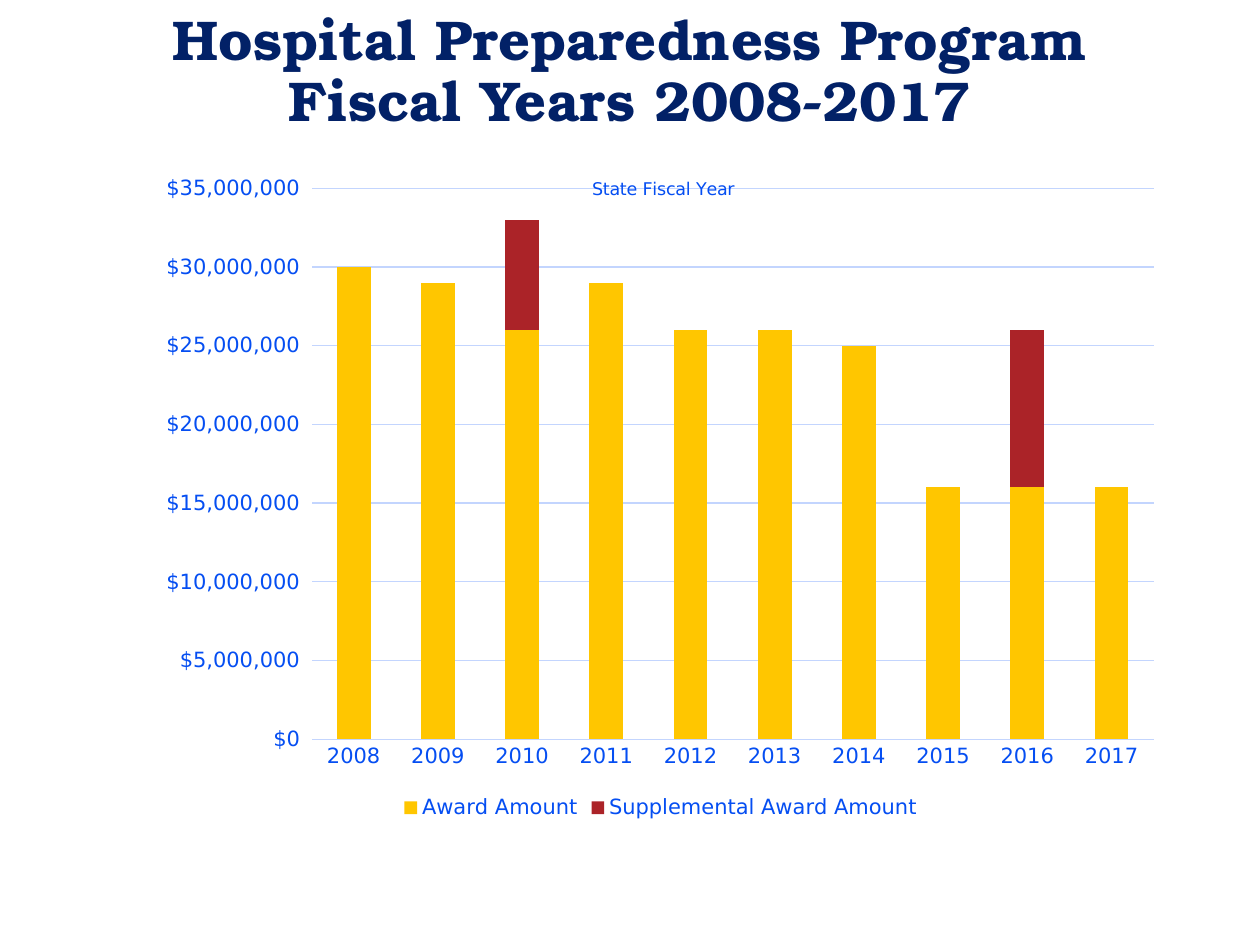
from dataclasses import dataclass
from typing import Optional

from lxml import etree
from pptx import Presentation
from pptx.chart.data import CategoryChartData
from pptx.dml.color import RGBColor
from pptx.enum.chart import XL_CHART_TYPE, XL_LEGEND_POSITION, XL_TICK_MARK
from pptx.enum.text import MSO_ANCHOR, PP_ALIGN
from pptx.oxml.ns import qn
from pptx.util import Pt

STACKED = XL_CHART_TYPE.COLUMN_STACKED
LEGEND_BOTTOM = XL_LEGEND_POSITION.BOTTOM
NO_TICK = XL_TICK_MARK.NONE
BOTTOM, CENTER = MSO_ANCHOR.BOTTOM, PP_ALIGN.CENTER
MILLION = 1_000_000


@dataclass(frozen=True)
class Theme:
    heading_font: str = "TeX Gyre Bonum"
    chart_font: str = "DejaVu Sans"
    navy: str = "022167"
    blue: str = "054EF2"
    grid: str = "C3D5FE"
    gold: str = "FFC600"
    red: str = "AB2328"
    heading_size: int = 32
    label_size: int = 12
    caption_size: int = 10


@dataclass(frozen=True)
class Box:
    left: float
    top: float
    width: float
    height: float

    def lengths(self) -> tuple:
        return Pt(self.left), Pt(self.top), Pt(self.width), Pt(self.height)


@dataclass(frozen=True)
class Award:
    name: str
    millions: list[Optional[int]]
    color: str


THEME = Theme()
HEADING_BOX = Box(49.7, 12.2, 620.6, 67.7)
CHART_BOX = Box(84.2, 62.6, 586.8, 409)
YEARS = [str(year) for year in range(2008, 2018)]
SUPPLEMENTS = {"2010": 7, "2016": 10, "2017": 0}
AWARDS = [
    Award("Award Amount", [30, 29, 26, 29, 26, 26, 25, 16, 16, 16], THEME.gold),
    Award("Supplemental Award Amount",
          [SUPPLEMENTS.get(year) for year in YEARS], THEME.red),
]


def style_font(font, name: str, size: float, color: str, bold: bool = False) -> None:
    font.name, font.size, font.bold = name, Pt(size), bold
    font.color.rgb = RGBColor.from_string(color)


def manual_layout(**settings) -> etree.Element:
    """Chart layout in fractions of the chart area."""
    layout = etree.Element(qn("c:layout"))
    manual = etree.SubElement(layout, qn("c:manualLayout"))
    for tag, value in settings.items():
        etree.SubElement(manual, qn(f"c:{tag}")).set("val", str(value))
    return layout


def remove_layout(parent) -> None:
    for layout in parent.findall(qn("c:layout")):
        parent.remove(layout)


def add_heading(slide, text: str) -> None:
    frame = slide.shapes.add_textbox(*HEADING_BOX.lengths()).text_frame
    frame.word_wrap = True
    frame.vertical_anchor = BOTTOM
    heading = frame.paragraphs[0]
    heading.text = text
    heading.alignment = CENTER
    heading.line_spacing = 0.9
    style_font(heading.font, THEME.heading_font, THEME.heading_size, THEME.navy, True)


def style_axis(axis) -> None:
    axis.major_tick_mark = axis.minor_tick_mark = NO_TICK
    axis.format.line.fill.background()
    style_font(axis.tick_labels.font, THEME.chart_font, THEME.label_size, THEME.blue)


def add_caption(chart, text: str) -> None:
    """Chart title laid over the top gridline."""
    caption = chart.chart_title.text_frame.paragraphs[0]
    caption.text = text
    style_font(caption.font, THEME.chart_font, THEME.caption_size, THEME.blue)
    title = chart.chart_title.element
    remove_layout(title)
    title.find(qn("c:tx")).addnext(
        manual_layout(xMode="edge", yMode="edge", x=0.43, y=0.09))
    title.find(qn("c:overlay")).set("val", "1")


def add_award_chart(slide, awards: list[Award]) -> None:
    data = CategoryChartData()
    data.categories = YEARS
    for award in awards:
        data.add_series(award.name, [None if amount is None else amount * MILLION
                                     for amount in award.millions])
    chart = slide.shapes.add_chart(STACKED, *CHART_BOX.lengths(), data).chart
    style_font(chart.font, THEME.chart_font, THEME.caption_size, THEME.navy)
    add_caption(chart, "State Fiscal Year")

    plot = chart.plots[0]
    plot.gap_width, plot.overlap, plot.vary_by_categories = 150, 100, False
    for series, award in zip(plot.series, awards):
        series.format.fill.solid()
        series.format.fill.fore_color.rgb = RGBColor.from_string(award.color)

    amounts = chart.value_axis
    for axis in (chart.category_axis, amounts):
        style_axis(axis)
    amounts.minimum_scale, amounts.maximum_scale = 0, 35 * MILLION
    amounts.major_unit = 5 * MILLION
    amounts.tick_labels.number_format = '"$"#,##0_);[Red]\\("$"#,##0\\)'
    amounts.tick_labels.number_format_is_linked = False
    gridline = amounts.major_gridlines.format.line
    gridline.width = Pt(0.75)
    gridline.color.rgb = RGBColor.from_string(THEME.grid)

    chart.has_legend = True
    chart.legend.position = LEGEND_BOTTOM
    chart.legend.include_in_layout = False
    style_font(chart.legend.font, THEME.chart_font, THEME.label_size, THEME.blue)

    plot_area = chart.element.find(f".//{qn('c:plotArea')}")
    remove_layout(plot_area)
    plot_area.insert(0, manual_layout(layoutTarget="inner", xMode="edge", yMode="edge",
                                      x=0.16, y=0.11, w=0.82, h=0.77))


def main() -> None:
    deck = Presentation()
    deck.slide_width, deck.slide_height = Pt(720), Pt(540)
    slide = deck.slides.add_slide(deck.slide_layouts[6])
    add_heading(slide, "Hospital Preparedness Program Fiscal Years 2008-2017")
    add_award_chart(slide, AWARDS)
    deck.save("out.pptx")


if __name__ == "__main__":
    main()
